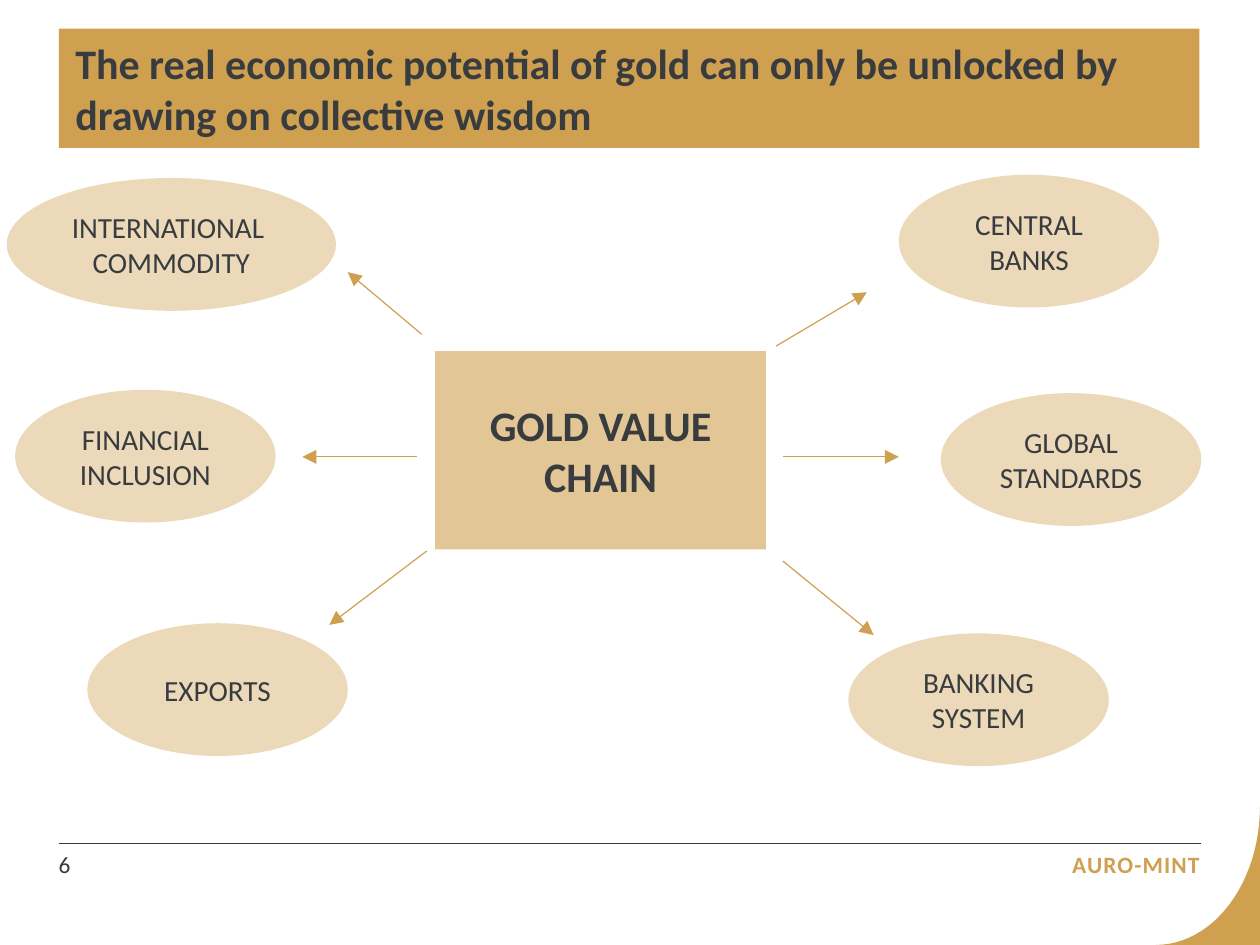
from dataclasses import dataclass
from math import cos, pi, sin

from lxml import etree
from pptx import Presentation
from pptx.dml.color import RGBColor
from pptx.enum.shapes import MSO_CONNECTOR, MSO_SHAPE
from pptx.enum.text import MSO_ANCHOR, PP_ALIGN
from pptx.oxml.ns import qn
from pptx.shapes.base import BaseShape
from pptx.slide import Slide
from pptx.text.text import TextFrame
from pptx.util import Inches, Pt

COLORS = {"gold": "CFA04F", "sand": "E2C695", "cream": "ECD9B9", "ink": "393C3F"}
FONT = "Calibri"
SLIDE_W = 7.5
SLIDE_H = SLIDE_W * 3 / 4
OVAL_H = 0.79


@dataclass(frozen=True)
class Topic:
    """An oval of the value chain and the arrow that leads to it."""
    text: str
    left: float
    top: float
    start: tuple[float, float]
    end: tuple[float, float]
    width: float = 1.55


TOPICS = [
    Topic("INTERNATIONAL \nCOMMODITY", 0.04, 1.06, (2.51, 1.99), (2.07, 1.62), 1.96),
    Topic("FINANCIAL INCLUSION", 0.09, 2.32, (2.48, 2.72), (1.8, 2.72)),
    Topic("EXPORTS", 0.52, 3.71, (2.54, 3.28), (1.96, 3.72)),
    Topic("BANKING SYSTEM", 5.05, 3.77, (4.66, 3.34), (5.2, 3.78)),
    Topic("GLOBAL STANDARDS", 5.6, 2.34, (4.66, 2.72), (5.35, 2.72)),
    Topic("CENTRAL BANKS", 5.35, 1.04, (4.62, 2.06), (5.16, 1.74)),
]


def rgb(name: str) -> RGBColor:
    return RGBColor.from_string(COLORS[name])


def paint(sp: BaseShape, color: str) -> None:
    """Give a shape a plain fill without line or shadow."""
    sp.shadow.inherit = False
    sp.fill.solid()
    sp.fill.fore_color.rgb = rgb(color)
    sp.line.fill.background()


def write(tf: TextFrame, text: str, size: float, align: PP_ALIGN,
          bold: bool = False, color: str = "ink") -> None:
    tf.word_wrap = True
    tf.text = text
    for p in tf.paragraphs:
        p.alignment = align
        for r in p.runs:
            r.font.name = FONT
            r.font.size = Pt(size)
            r.font.bold = bold
            r.font.color.rgb = rgb(color)


def add_block(s: Slide, kind: MSO_SHAPE, box: tuple[float, ...], color: str,
              text: str, size: float, bold: bool = False,
              align: PP_ALIGN = PP_ALIGN.CENTER) -> None:
    sp = s.shapes.add_shape(kind, *map(Inches, box))
    paint(sp, color)
    sp.text_frame.vertical_anchor = MSO_ANCHOR.MIDDLE
    write(sp.text_frame, text, size, align, bold)


def add_line(s: Slide, start: tuple[float, float], end: tuple[float, float],
             color: str, arrow: bool = False) -> None:
    line = s.shapes.add_connector(MSO_CONNECTOR.STRAIGHT, *map(Inches, start + end))
    line.line.color.rgb = rgb(color)
    line.line.width = Pt(0.5)
    if arrow:
        ln = line.line._get_or_add_ln()
        etree.SubElement(ln, qn("a:tailEnd"), type="triangle")
    etree.SubElement(line._element.spPr, qn("a:effectLst"))


def add_corner(s: Slide) -> None:
    """Fill the bottom right corner outside a quarter ellipse."""
    left, top = 6.88, 4.8
    steps = 24
    angles = [pi / 2 * i / steps for i in range(steps + 1)]
    curve = [(Inches(left + (SLIDE_W - left) * cos(a)),
              Inches(top + (SLIDE_H - top) * sin(a))) for a in angles]
    outline = s.shapes.build_freeform(Inches(SLIDE_W), Inches(SLIDE_H))
    outline.add_line_segments(curve)
    paint(outline.convert_to_shape(), "gold")


def add_label(s: Slide, left: float, width: float, text: str, align: PP_ALIGN,
              bold: bool = False, color: str = "ink") -> TextFrame:
    """Add a footer text."""
    tf = s.shapes.add_textbox(*map(Inches, (left, 5.06, width, 0.2))).text_frame
    tf.margin_left = tf.margin_top = tf.margin_right = tf.margin_bottom = 0
    write(tf, text, 10, align, bold, color)
    return tf


def main() -> None:
    prs = Presentation()
    prs.slide_width, prs.slide_height = Inches(SLIDE_W), Inches(SLIDE_H)
    s = prs.slides.add_slide(prs.slide_layouts[6])

    add_corner(s)
    brand = add_label(s, 5.55, 1.59, "AURO-MINT", PP_ALIGN.RIGHT, True, "gold")
    brand.paragraphs[0].runs[0].font._element.set("spc", "50")
    add_line(s, (0.35, 5.02), (7.15, 5.02), "ink")
    add_label(s, 0.35, 0.47, "6", PP_ALIGN.LEFT)

    for topic in TOPICS:
        box = (topic.left, topic.top, topic.width, OVAL_H)
        add_block(s, MSO_SHAPE.OVAL, box, "cream", topic.text, 12.5)
        add_line(s, topic.start, topic.end, "gold", arrow=True)

    add_block(s, MSO_SHAPE.RECTANGLE, (2.59, 2.09, 1.97, 1.18), "sand",
              "GOLD VALUE CHAIN", 18, True)
    add_block(s, MSO_SHAPE.RECTANGLE, (0.35, 0.17, 6.79, 0.71), "gold",
              "The real economic potential of gold can only be unlocked by\n"
              "drawing on collective wisdom", 18, True, PP_ALIGN.LEFT)
    prs.save("out.pptx")


if __name__ == "__main__":
    main()
